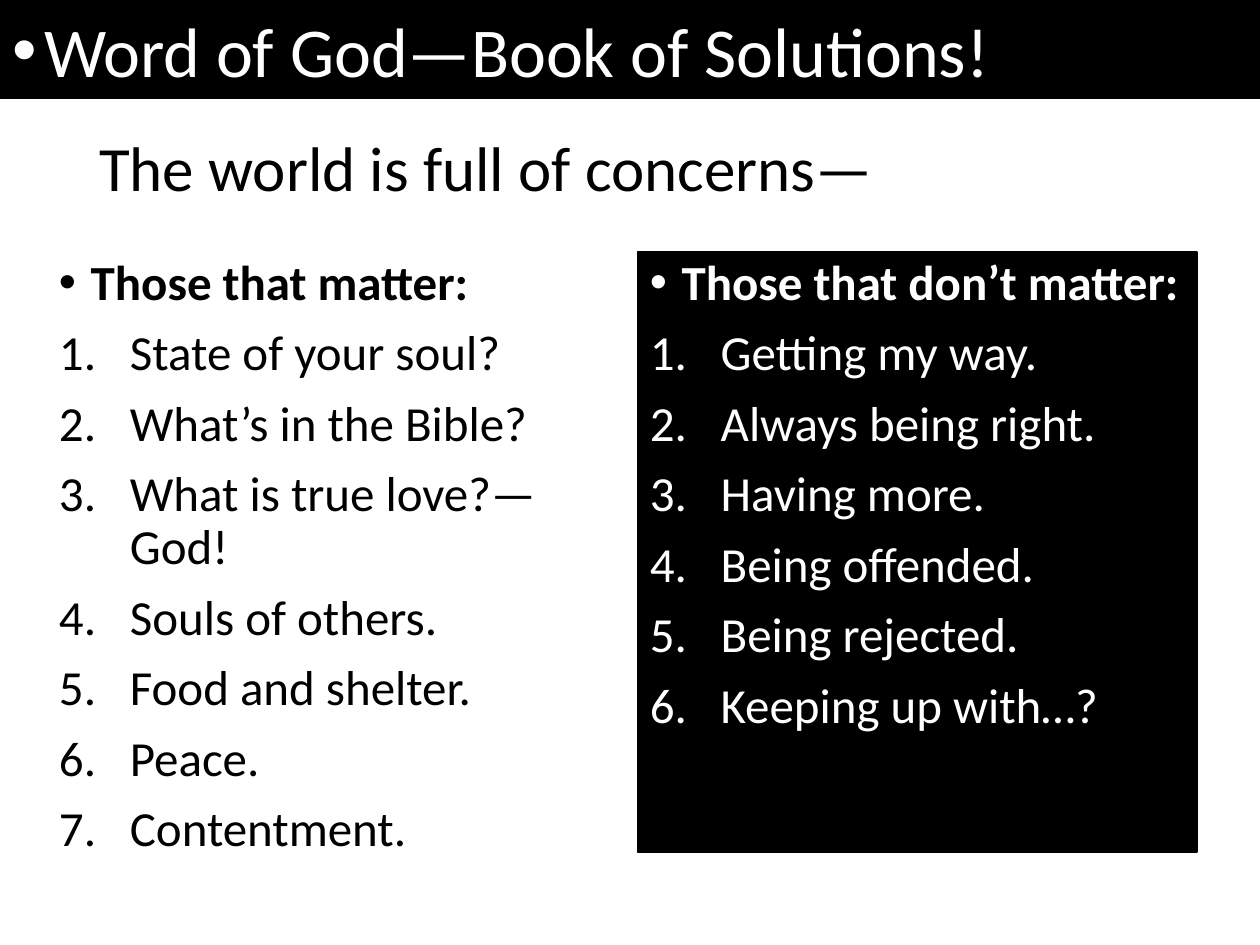
from lxml.etree import SubElement
from pptx import Presentation
from pptx.dml.color import RGBColor
from pptx.enum.shapes import MSO_SHAPE
from pptx.enum.text import MSO_ANCHOR
from pptx.oxml.ns import qn
from pptx.util import Cm, Pt

# Content
BLACK, WHITE = "000000", "FFFFFF"
BANNER = "Word of God—Book of Solutions!"
INTRO = "The world is full of concerns—"
CONCERNS = [
    {"heading": "Those that matter:",
     "items": ["State of your soul?", "What’s in the Bible?", "What is true love?—God!",
               "Souls of others.", "Food and shelter.", "Peace.", "Contentment."],
     "area": (0.94, 5.08, 11.58, 13.97), "fill": None, "color": BLACK},
    {"heading": "Those that don’t matter:",
     "items": ["Getting my way.", "Always being right.", "Having more.",
               "Being offended.", "Being rejected.", "Keeping up with…?"],
     "area": (12.85, 5.08, 11.28, 12.09), "fill": BLACK, "color": WHITE},
]
BULLET_INDENT, NUMBER_INDENT = Cm(0.64), Cm(1.43)


def rgb(value):
    return RGBColor.from_string(value)


def add_frame(slide, area, fill=None, anchor=MSO_ANCHOR.TOP):
    """Add a text box, or a filled rectangle, and return its text frame."""
    place = [Cm(length) for length in area]
    if fill:
        panel = slide.shapes.add_shape(MSO_SHAPE.RECTANGLE, *place)
        panel.shadow.inherit = False
        panel.fill.solid()
        panel.fill.fore_color.rgb = rgb(fill)
        panel.line.color.rgb = rgb(fill)
        panel.line.width = Pt(1)
    else:
        panel = slide.shapes.add_textbox(*place)
    frame = panel.text_frame
    frame.word_wrap = True
    frame.vertical_anchor = anchor
    return frame


def add_text(frame, text, size=28, color=BLACK, bold=False, marker=None,
             line_spacing=None, before=0):
    """Write one paragraph; marker is "bullet", "number" or None."""
    first = frame.paragraphs[0]
    paragraph = first if not first.runs else frame.add_paragraph()
    run = paragraph.add_run()
    run.text = text
    run.font.name = "Calibri"
    run.font.size = Pt(size)
    run.font.bold = bold
    run.font.color.rgb = rgb(color)
    paragraph.line_spacing = line_spacing
    paragraph.space_before = Pt(before)

    properties = paragraph._p.get_or_add_pPr()
    properties.set("algn", "l")
    if marker:
        indent = BULLET_INDENT if marker == "bullet" else NUMBER_INDENT
        properties.set("marL", str(indent))
        properties.set("indent", str(-indent))
        marker_font = "Arial" if marker == "bullet" else "Calibri"
        SubElement(properties, qn("a:buFont"), typeface=marker_font)
        if marker == "bullet":
            SubElement(properties, qn("a:buChar"), char="•")
        else:
            SubElement(properties, qn("a:buAutoNum"), type="arabicPeriod")


def main():
    deck = Presentation()
    deck.slide_width, deck.slide_height = Cm(25.4), Cm(19.05)
    slide = deck.slides.add_slide(deck.slide_layouts[6])

    # Two lists of concerns
    for concern in CONCERNS:
        column = add_frame(slide, concern["area"], concern["fill"])
        style = {"color": concern["color"], "line_spacing": 0.9, "before": 10}
        add_text(column, concern["heading"], bold=True, marker="bullet", **style)
        for item in concern["items"]:
            add_text(column, item, marker="number", **style)

    # Banner across the top
    banner = add_frame(slide, (0, 0, 25.4, 1.98), BLACK, MSO_ANCHOR.MIDDLE)
    add_text(banner, BANNER, size=40, color=WHITE, marker="bullet", before=10)

    # Introductory line
    intro = add_frame(slide, (1.75, 2.46, 18.8, 1.8))
    add_text(intro, INTRO, size=36)

    deck.save("out.pptx")


if __name__ == "__main__":
    main()
